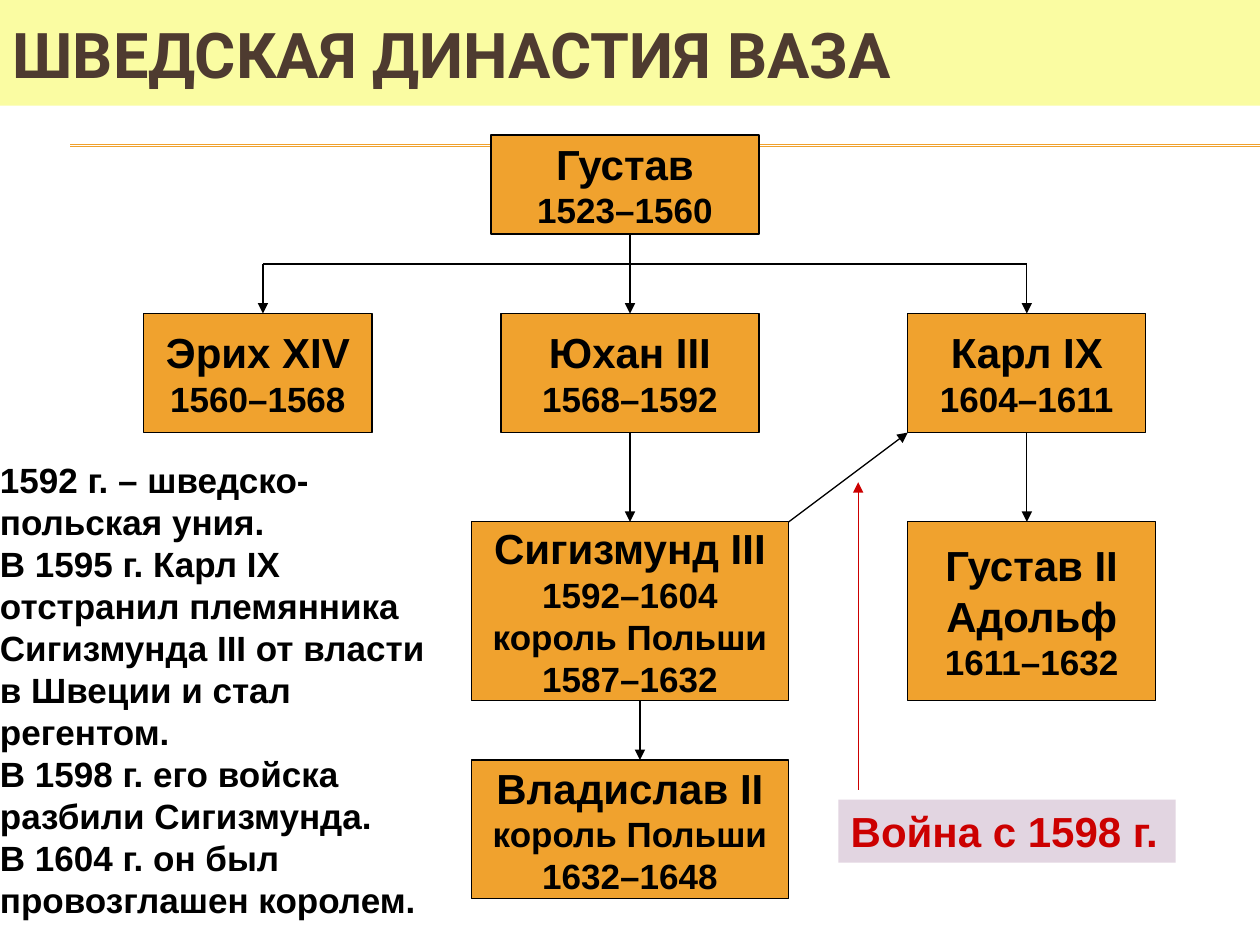
from lxml import etree
from pptx import Presentation
from pptx import util as u
from pptx.dml.color import RGBColor
from pptx.enum import shapes, text
from pptx.oxml.ns import qn

COLORS = {
    "banner": "FAFCA2", "title": "4E3B30", "ruler": "F0A22E",
    "black": "000000", "war": "CC0000", "war_fill": "D8C6D7",
}
TITLE = "ШВЕДСКАЯ ДИНАСТИЯ ВАЗА"
WAR = "Война с 1598 г."
NOTES = [
    "1592 г. – шведско-польская уния.",
    "В 1595 г. Карл IX отстранил племянника",
    "Сигизмунда III от власти",
    "в Швеции и стал регентом.",
    "В 1598 г. его войска разбили Сигизмунда.",
    "В 1604 г. он был провозглашен королем.",
]

# Generations: (top, height) in cm; rulers: generation, left, width, name lines, details
GENERATIONS = [(2.72, 2), (6.32, 2.4), (10.52, 3.6), (15.32, 2.8)]
RULERS = [
    (2, 9.5, 6.4, ["Сигизмунд III"], ["1592–1604", "король Польши", "1587–1632"]),
    (0, 9.9, 5.4, ["Густав"], ["1523–1560"]),
    (1, 2.9, 4.6, ["Эрих XIV"], ["1560–1568"]),
    (1, 10.1, 5.2, ["Юхан III"], ["1568–1592"]),
    (1, 18.3, 4.8, ["Карл IX"], ["1604–1611"]),
    (2, 18.3, 5, ["Густав II", "Адольф"], ["1611–1632"]),
    (3, 9.5, 6.4, ["Владислав II"], ["король Польши", "1632–1648"]),
]
ERIK_X, JOHAN_X, KARL_X, VLADISLAV_X = 5.3, 12.7, 20.7, 12.9
BRANCH_Y, WAR_X = 5.32, 17.3
TOPS = [top for top, height in GENERATIONS]
BOTTOMS = [top + height for top, height in GENERATIONS]

# Start, end, color, arrowhead
RULES = [((1.42, y), (25.4, y), "ruler", False) for y in (2.92, 2.95)]
LINKS = [
    ((JOHAN_X, BOTTOMS[0]), (JOHAN_X, TOPS[1]), "black", True),
    ((ERIK_X, BRANCH_Y), (KARL_X, BRANCH_Y), "black", False),
    ((ERIK_X, BRANCH_Y), (ERIK_X, TOPS[1]), "black", True),
    ((KARL_X, BRANCH_Y), (KARL_X, TOPS[1]), "black", True),
    ((JOHAN_X, BOTTOMS[1]), (JOHAN_X, TOPS[2]), "black", True),
    ((KARL_X, BOTTOMS[1]), (KARL_X, TOPS[2]), "black", True),
    ((VLADISLAV_X, BOTTOMS[2]), (VLADISLAV_X, TOPS[3]), "black", True),
    ((WAR_X, 15.92), (WAR_X, 9.72), "war", True),
    ((15.9, TOPS[2]), (18.3, BOTTOMS[1]), "black", True),
]


def color(name):
    return RGBColor.from_string(COLORS[name])


def fill(shape, name):
    shape.fill.solid()
    shape.fill.fore_color.rgb = color(name)


def write(box, paragraphs, color_name="black", font="Arial", align=text.PP_ALIGN.LEFT):
    """Fill a box with (lines, size) paragraphs; lines are split by line breaks."""
    frame = box.text_frame
    for index, (lines, size) in enumerate(paragraphs):
        para = frame.add_paragraph() if index else frame.paragraphs[0]
        para.alignment = align
        for number, line in enumerate(lines):
            if number:
                para.add_line_break()
            span = para.add_run()
            span.text = line
            span.font.name = font
            span.font.size = u.Pt(size)
            span.font.bold = True
            span.font.color.rgb = color(color_name)


def add_box(page, left, top, width, height, fill_name):
    box = page.shapes.add_shape(
        shapes.MSO_SHAPE.RECTANGLE, *map(u.Cm, (left, top, width, height)))
    box.shadow.inherit = False
    fill(box, fill_name)
    box.text_frame.word_wrap = False
    return box


def add_line(page, start, end, color_name, arrow):
    line = page.shapes.add_connector(
        shapes.MSO_CONNECTOR.STRAIGHT, *map(u.Cm, start + end))
    line.line.color.rgb = color(color_name)
    line.line.width = u.Pt(0.75)
    if arrow:
        outline = line.line._get_or_add_ln()
        etree.SubElement(outline, qn("a:tailEnd"), type="triangle")
    etree.SubElement(line._element.spPr, qn("a:effectLst"))


def add_title(page):
    title = page.shapes.title
    title.left, title.top = u.Cm(0), u.Cm(0)
    title.width, title.height = u.Cm(25.4), u.Cm(2.13)
    fill(title, "banner")
    title.text_frame.vertical_anchor = text.MSO_ANCHOR.MIDDLE
    write(title, [([TITLE], 36)], "title", "Roboto")


def add_ruler(page, generation, left, width, names, details):
    top, height = GENERATIONS[generation]
    box = add_box(page, left, top, width, height, "ruler")
    box.line.color.rgb = color("black")
    box.line.width = u.Pt(0.75)
    box.text_frame.vertical_anchor = text.MSO_ANCHOR.MIDDLE
    write(box, [(names, 24)] + [([detail], 20) for detail in details],
          align=text.PP_ALIGN.CENTER)


def add_war_label(page):
    label = add_box(page, 16.9, 16.12, 6.8, 1.27, "war_fill")
    label.line.fill.background()
    label.text_frame.vertical_anchor = text.MSO_ANCHOR.TOP
    tint = label._element.spPr.find(qn("a:solidFill"))[0]
    etree.SubElement(tint, qn("a:alpha"), val="73000")
    write(label, [([WAR], 24)], "war")


def add_notes_text(page):
    box = page.shapes.add_textbox(*map(u.Cm, (-0.25, 9.12, 9.15, 9.58)))
    box.text_frame.word_wrap = True
    write(box, [([note], 20) for note in NOTES])


def main():
    deck = Presentation()
    deck.slide_width, deck.slide_height = u.Cm(25.4), u.Cm(19.05)
    page = deck.slides.add_slide(deck.slide_layouts[5])
    add_title(page)
    for rule in RULES:
        add_line(page, *rule)
    for ruler in RULERS:
        add_ruler(page, *ruler)
    for link in LINKS:
        add_line(page, *link)
    add_war_label(page)
    add_notes_text(page)
    deck.save("out.pptx")


if __name__ == "__main__":
    main()
